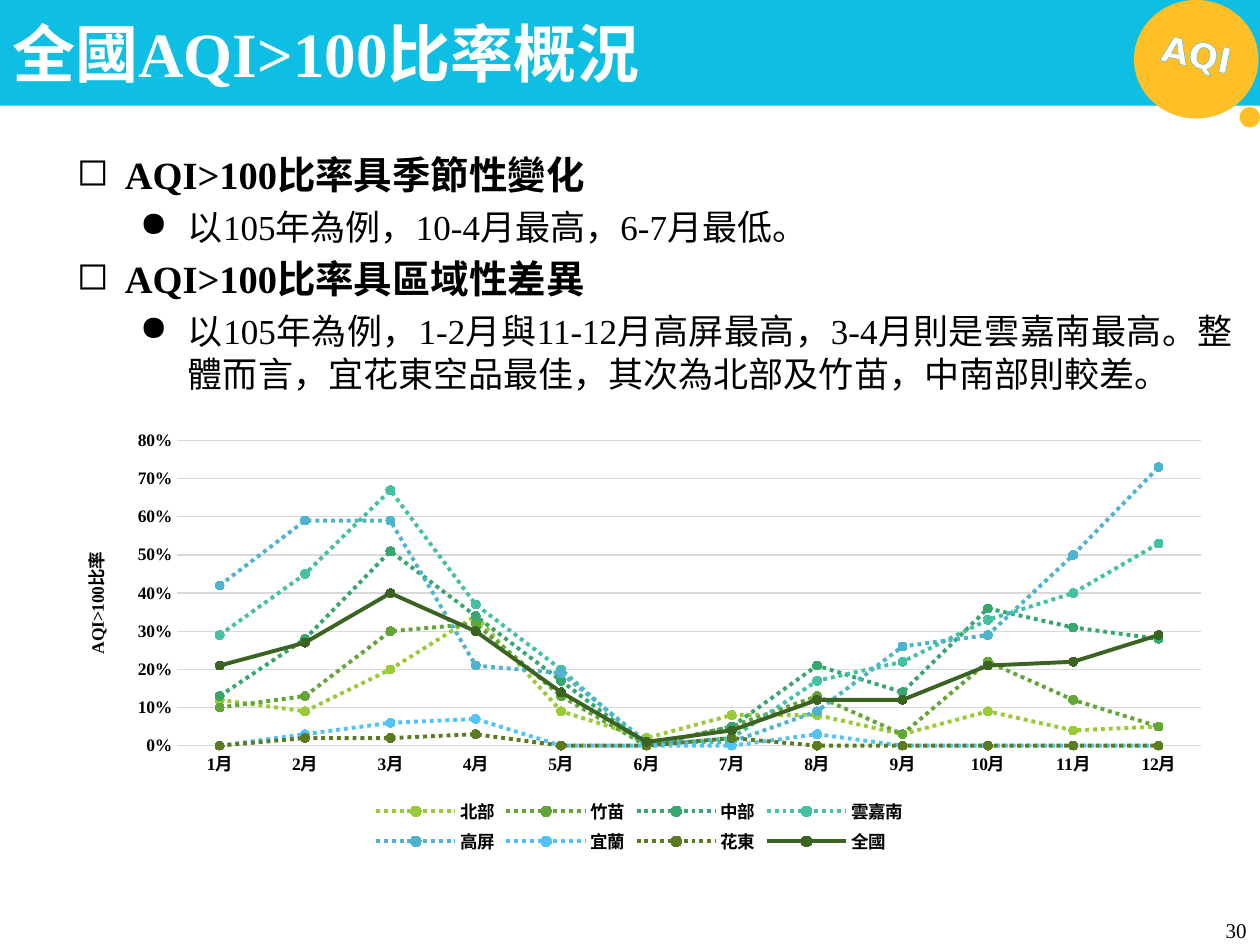
from lxml import etree
from pptx import Presentation
from pptx.chart.data import CategoryChartData
from pptx.dml.color import RGBColor
from pptx.enum.chart import XL_CHART_TYPE, XL_LEGEND_POSITION, XL_MARKER_STYLE, XL_TICK_MARK
from pptx.enum.dml import MSO_LINE
from pptx.enum.shapes import MSO_SHAPE
from pptx.enum.text import MSO_ANCHOR, PP_ALIGN
from pptx.oxml import parse_xml
from pptx.oxml.ns import nsdecls, qn
from pptx.util import Cm, Pt

RECTANGLE, OVAL = MSO_SHAPE.RECTANGLE, MSO_SHAPE.OVAL
LEFT, CENTER, RIGHT, JUSTIFY = PP_ALIGN.LEFT, PP_ALIGN.CENTER, PP_ALIGN.RIGHT, PP_ALIGN.JUSTIFY
TOP, MIDDLE, BOTTOM = MSO_ANCHOR.TOP, MSO_ANCHOR.MIDDLE, MSO_ANCHOR.BOTTOM
NO_TICK = XL_TICK_MARK.NONE

SERIF, SANS, CJK = "Times New Roman", "DejaVu Sans", "Noto Sans CJK SC"
CYAN, AMBER, WHITE, BLACK, GRID = "0FBEE3", "FEBF27", "FFFFFF", "000000", "D9D9D9"

TITLE = "全國AQI>100比率概況"
BADGE = "AQI"
PAGE_NUMBER = "30"
POINTS = [
    (0, "AQI>100比率具季節性變化"),
    (1, "以105年為例，10-4月最高，6-7月最低。"),
    (0, "AQI>100比率具區域性差異"),
    (1, "以105年為例，1-2月與11-12月高屏最高，3-4月則是雲嘉南最高。"
        "整體而言，宜花東空品最佳，其次為北部及竹苗，中南部則較差。"),
]
# bullet, left margin in cm, size, bold
LEVELS = [("◻", 0.97, 22, True), ("●", 2.24, 20, False)]
HANGING = 0.97

AXIS_TITLE = "AQI>100比率"
MONTHS = [f"{month}月" for month in range(1, 13)]
NATIONAL = "全國"
SERIES = [
    ("北部", "99CB38", (12, 9, 20, 34, 9, 2, 8, 8, 3, 9, 4, 5)),
    ("竹苗", "63A537", (10, 13, 30, 32, 13, 0, 5, 13, 3, 22, 12, 5)),
    ("中部", "37A76F", (13, 28, 51, 34, 17, 0, 5, 21, 14, 36, 31, 28)),
    ("雲嘉南", "44C1A3", (29, 45, 67, 37, 20, 0, 2, 17, 22, 33, 40, 53)),
    ("高屏", "4EB3CF", (42, 59, 59, 21, 19, 1, 1, 9, 26, 29, 50, 73)),
    ("宜蘭", "51C3F9", (0, 3, 6, 7, 0, 0, 0, 3, 0, 0, 0, 0)),
    ("花東", "5C7B20", (0, 2, 2, 3, 0, 0, 2, 0, 0, 0, 0, 0)),
    (NATIONAL, "3B6321", (21, 27, 40, 30, 14, 1, 4, 12, 12, 21, 22, 29)),
]


def color(value):
    return RGBColor.from_string(value)


def set_font(font, name, size, fill, bold=False):
    font.name, font.size, font.bold = name, Pt(size), bold
    font.color.rgb = color(fill)


def add_filled(slide, kind, box, fill):
    shape = slide.shapes.add_shape(kind, *map(Cm, box))
    shape.shadow.inherit = False
    shape.fill.solid()
    shape.fill.fore_color.rgb = color(fill)
    shape.line.fill.background()


def add_box(slide, box, anchor):
    shape = slide.shapes.add_textbox(*map(Cm, box))
    shape.text_frame.word_wrap = True
    shape.text_frame.vertical_anchor = anchor
    return shape


def add_label(slide, box, text, anchor, alignment, *font):
    shape = add_box(slide, box, anchor)
    paragraph = shape.text_frame.paragraphs[0]
    paragraph.text, paragraph.alignment = text, alignment
    set_font(paragraph.font, *font)
    return shape


def add_badge(slide):
    add_filled(slide, OVAL, (22.86, 0, 2.51, 2.39), AMBER)
    label = add_label(slide, (22.78, 0.53, 2.69, 1.12), BADGE, TOP, CENTER, SANS, 20, WHITE, True)
    label.rotation = 11.4
    run = label.text_frame.paragraphs[0].runs[0]
    run.font.size = Pt(20)
    run.font._element.insert(0, parse_xml(
        f'<a:ln {nsdecls("a")} w="{Pt(0.8)}"><a:solidFill><a:srgbClr val="4EB3CF"/></a:solidFill></a:ln>'))
    add_filled(slide, OVAL, (24.99, 2.16, 0.41, 0.41), AMBER)


def add_points(slide):
    frame = add_box(slide, (1.3, 2.92, 23.8, 5.99), TOP).text_frame
    for index, (level, text) in enumerate(POINTS):
        bullet, margin, size, bold = LEVELS[level]
        paragraph = frame.add_paragraph() if index else frame.paragraphs[0]
        paragraph.text, paragraph.level, paragraph.alignment = text, level, JUSTIFY
        properties = paragraph._p.get_or_add_pPr()
        properties.set("marL", str(Cm(margin)))
        properties.set("indent", str(-Cm(HANGING)))
        etree.SubElement(properties, qn("a:buChar")).set("char", bullet)
        paragraph.line_spacing = Pt(size + 4.5)
        if index:
            paragraph.space_before = Pt(size * 0.2)
        set_font(paragraph.font, SERIF, size, BLACK, bold)


def layout_xml(x, y, width, height, inner=False):
    """Manual layout in fractions of the chart area."""
    target = '<c:layoutTarget val="inner"/>' if inner else ""
    return parse_xml(
        f'<c:layout {nsdecls("c")}><c:manualLayout>{target}'
        '<c:xMode val="edge"/><c:yMode val="edge"/>'
        f'<c:x val="{x}"/><c:y val="{y}"/><c:w val="{width}"/><c:h val="{height}"/>'
        '</c:manualLayout></c:layout>')


def replace_layout(parent, layout, position):
    for old in parent.findall(qn("c:layout")):
        parent.remove(old)
    parent.insert(position, layout)


def style_axes(chart):
    months, rates = chart.category_axis, chart.value_axis
    for axis in (months, rates):
        axis.major_tick_mark = axis.minor_tick_mark = NO_TICK
    rates.minimum_scale, rates.maximum_scale, rates.major_unit = 0, 0.8, 0.1
    rates.tick_labels.number_format = "0%"
    rates.tick_labels.number_format_is_linked = False
    rates.format.line.fill.background()
    for line in (months.format.line, rates.major_gridlines.format.line):
        line.color.rgb = color(GRID)
        line.width = Pt(0.75)
    paragraph = rates.axis_title.text_frame.paragraphs[0]
    paragraph.text = AXIS_TITLE
    set_font(paragraph.font, SERIF, 10, BLACK, True)


def style_series(chart):
    for series, (name, fill, _) in zip(chart.plots[0].series, SERIES):
        series.smooth = False
        line, marker = series.format.line, series.marker
        line.color.rgb = color(fill)
        line.width = Pt(2.25)
        if name != NATIONAL:
            line.dash_style = MSO_LINE.ROUND_DOT
        marker.style, marker.size = XL_MARKER_STYLE.CIRCLE, 5
        marker.format.fill.solid()
        marker.format.fill.fore_color.rgb = color(fill)
        marker.format.line.color.rgb = color(fill)


def add_rate_chart(slide):
    data = CategoryChartData(number_format="0%")
    data.categories = MONTHS
    for name, _, percents in SERIES:
        data.add_series(name, [percent / 100 for percent in percents])
    box = map(Cm, (1.09, 8.53, 23.6, 8.79))
    chart = slide.shapes.add_chart(XL_CHART_TYPE.LINE_MARKERS, *box, data).chart
    set_font(chart.font, SERIF, 10, BLACK, True)
    chart.has_title = False
    chart.plots[0].vary_by_categories = False
    style_axes(chart)
    style_series(chart)
    chart.has_legend = True
    legend = chart.legend
    legend.position, legend.include_in_layout = XL_LEGEND_POSITION.BOTTOM, False
    set_font(legend.font, CJK, 10, BLACK, True)
    replace_layout(legend._element, layout_xml(0.27, 0.85, 0.46, 0.15), 1)
    plot_area = chart._chartSpace.chart.plotArea
    replace_layout(plot_area, layout_xml(0.105, 0.04, 0.875, 0.7, inner=True), 0)


def main():
    presentation = Presentation()
    presentation.slide_width, presentation.slide_height = Cm(25.4), Cm(19.05)
    slide = presentation.slides.add_slide(presentation.slide_layouts[6])
    add_filled(slide, RECTANGLE, (0, 0, 25.4, 2.13), CYAN)
    add_badge(slide)
    add_label(slide, (0, 0, 22.71, 2.13), TITLE, MIDDLE, LEFT, SERIF, 36, WHITE, True)
    add_label(slide, (19.46, 17.81, 5.92, 1.32), PAGE_NUMBER, BOTTOM, RIGHT, SERIF, 12, BLACK)
    add_rate_chart(slide)
    add_points(slide)
    presentation.save("out.pptx")


if __name__ == "__main__":
    main()
